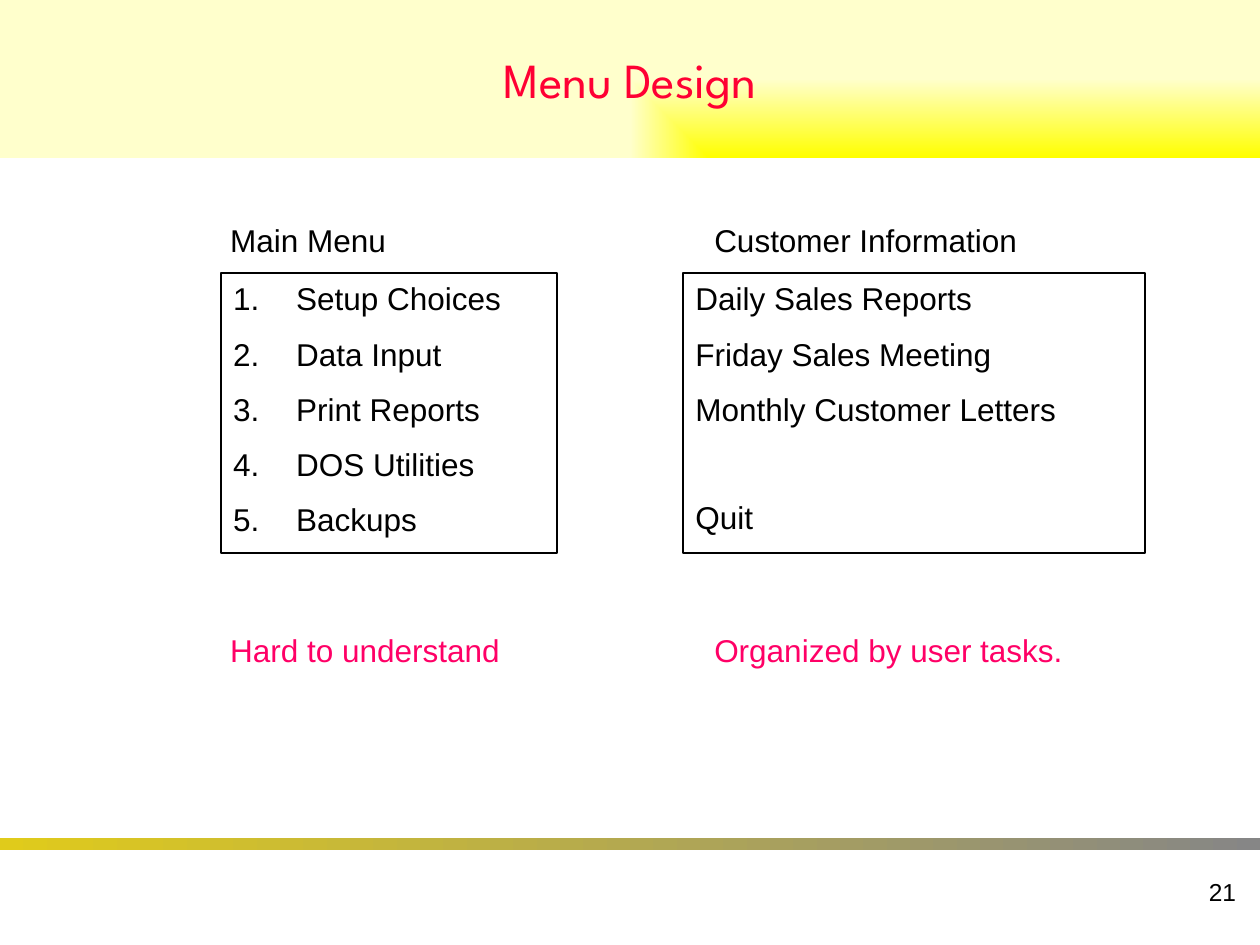
from dataclasses import dataclass

import lxml.etree
import pptx
import pptx.dml.color
import pptx.enum.shapes
import pptx.enum.text
import pptx.oxml.ns
import pptx.util

Cm = pptx.util.Cm
Pt = pptx.util.Pt
Align = pptx.enum.text.PP_ALIGN
Anchor = pptx.enum.text.MSO_ANCHOR
qn = pptx.oxml.ns.qn


@dataclass(frozen=True)
class Theme:
    title_font: str = "League Spartan"
    body_font: str = "Arial"
    title_size: int = 28
    body_size: int = 18
    number_size: int = 14
    title_color: str = "FF0033"
    ink: str = "000000"
    verdict_color: str = "FF0066"
    banner: tuple = ("FFFF00", "FFFFCC")
    rule: tuple = ("E0CB1B", "868686")
    line_gap: float = 9.9
    group_gap: float = 40.5


THEME = Theme()


def rgb(value):
    return pptx.dml.color.RGBColor.from_string(value)


def write(paragraph, text, *, font=THEME.body_font, size=THEME.body_size,
          color=THEME.ink, align=Align.LEFT, before=0):
    paragraph.alignment = align
    paragraph.space_before = Pt(before)
    run = paragraph.add_run()
    run.text = text
    run.font.name = font
    run.font.size = Pt(size)
    run.font.color.rgb = rgb(color)


class MenuSlide:
    def __init__(self, presentation, theme):
        self.theme = theme
        self.slide = presentation.slides.add_slide(presentation.slide_layouts[5])

    def gradient(self, shape, colors):
        shape.fill.gradient()
        shape.fill.gradient_angle = 0
        for stop, position, color in zip(shape.fill.gradient_stops, (0, 1), colors):
            stop.position = position
            stop.color.rgb = rgb(color)

    def rectangle(self, left, top, width, height):
        shape = self.slide.shapes.add_shape(
            pptx.enum.shapes.MSO_SHAPE.RECTANGLE,
            Cm(left), Cm(top), Cm(width), Cm(height))
        shape.shadow.inherit = False
        return shape

    def rule(self, top, width, height):
        rule = self.rectangle(0, top, width, height)
        rule.line.fill.background()
        self.gradient(rule, self.theme.rule)

    def title(self, text, width, height):
        title = self.slide.shapes.title
        title.left, title.top = Cm(0), Cm(0)
        title.width, title.height = Cm(width), Cm(height)
        self.gradient(title, self.theme.banner)
        direction = title._element.spPr.find(".//" + qn("a:lin"))
        corner = lxml.etree.Element(qn("a:path"), path="rect")
        lxml.etree.SubElement(corner, qn("a:fillToRect"), l="100000", t="100000")
        direction.getparent().replace(direction, corner)
        frame = title.text_frame
        frame.auto_size = pptx.enum.text.MSO_AUTO_SIZE.NONE
        frame.vertical_anchor = Anchor.MIDDLE
        write(frame.paragraphs[0], text, font=self.theme.title_font,
              size=self.theme.title_size, color=self.theme.title_color,
              align=Align.CENTER)

    def label(self, text, left, top, width, height=1.02, anchor=Anchor.TOP, **style):
        label = self.slide.shapes.add_textbox(Cm(left), Cm(top), Cm(width), Cm(height))
        label.text_frame.word_wrap = False
        label.text_frame.vertical_anchor = anchor
        write(label.text_frame.paragraphs[0], text, **style)

    def menu(self, groups, left, top, width, height, numbered):
        panel = self.rectangle(left, top, width, height)
        panel.fill.background()
        panel.line.color.rgb = rgb(self.theme.ink)
        panel.line.width = Pt(1)
        frame = panel.text_frame
        frame.word_wrap = True
        frame.vertical_anchor = Anchor.TOP
        paragraph, before, number = frame.paragraphs[0], 0, 0
        for group in groups:
            for item in group:
                number += 1
                if number > 1:
                    paragraph = frame.add_paragraph()
                write(paragraph, f"{number}.\t{item}" if numbered else item,
                      before=before)
                if numbered:
                    properties = paragraph._p.get_or_add_pPr()
                    properties.set("marL", str(Cm(1.27)))
                    properties.set("indent", str(-Cm(1.27)))
                before = self.theme.line_gap
            before = self.theme.group_gap


def main():
    presentation = pptx.Presentation()
    presentation.slide_width, presentation.slide_height = Cm(25.4), Cm(19.05)
    page = MenuSlide(presentation, THEME)
    page.rule(16.89, 25.4, 0.25)
    page.title("Menu Design", 25.4, 3.18)
    page.label("21", 19.89, 17.35, 5.28, 1.27, Anchor.MIDDLE,
               size=THEME.number_size, align=Align.RIGHT)

    setup_menu = [["Setup Choices", "Data Input", "Print Reports",
                   "DOS Utilities", "Backups"]]
    task_menu = [["Daily Sales Reports", "Friday Sales Meeting",
                  "Monthly Customer Letters"], ["Quit"]]
    page.menu(setup_menu, 4.45, 5.51, 6.78, 5.64, numbered=True)
    page.menu(task_menu, 13.77, 5.51, 9.32, 5.64, numbered=False)

    captions = [
        (4.39, ("Main Menu", 3.68), ("Hard to understand", 5.99)),
        (14.15, ("Customer Information", 6.68), ("Organized by user tasks.", 7.59)),
    ]
    for left, (heading, heading_width), (verdict, verdict_width) in captions:
        page.label(heading, left, 4.34, heading_width)
        page.label(verdict, left, 12.6, verdict_width, color=THEME.verdict_color)
    presentation.save("out.pptx")


if __name__ == "__main__":
    main()
